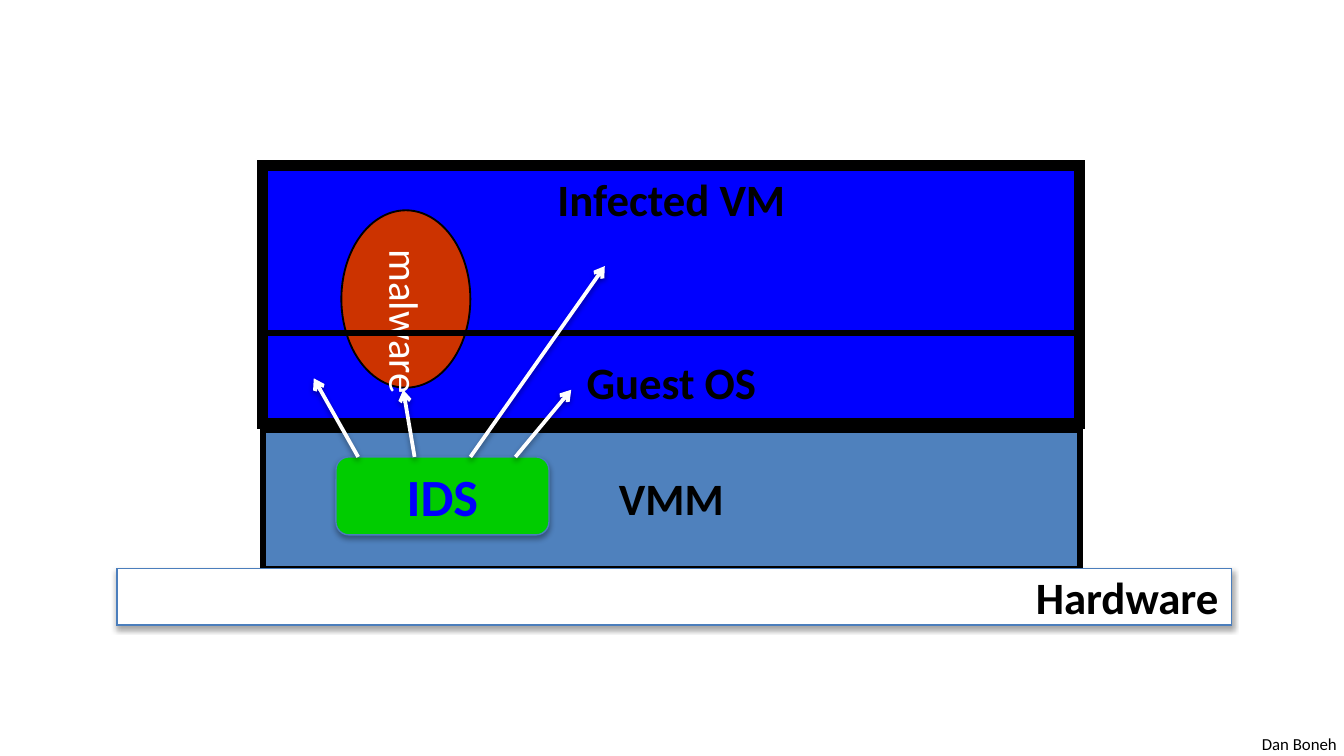
from dataclasses import dataclass
from typing import Optional

from lxml import etree
from pptx import Presentation
from pptx.dml.color import RGBColor
from pptx.enum.shapes import MSO_CONNECTOR, MSO_SHAPE
from pptx.enum.text import MSO_ANCHOR, MSO_AUTO_SIZE, PP_ALIGN
from pptx.oxml.ns import qn
from pptx.util import Emu, Pt

# Scale: 200 px to the inch
EMU_PER_PX = 4572
SLIDE_WIDTH, SLIDE_HEIGHT = 2000, 1125
FONT = "Calibri"

RECTANGLE = MSO_SHAPE.RECTANGLE
ROUNDED = MSO_SHAPE.ROUNDED_RECTANGLE
OVAL = MSO_SHAPE.OVAL
STRAIGHT = MSO_CONNECTOR.STRAIGHT
TOP, MIDDLE = MSO_ANCHOR.TOP, MSO_ANCHOR.MIDDLE
LEFT, CENTER, RIGHT = PP_ALIGN.LEFT, PP_ALIGN.CENTER, PP_ALIGN.RIGHT
FIT_TEXT = MSO_AUTO_SIZE.SHAPE_TO_FIT_TEXT

BLACK = RGBColor(0x00, 0x00, 0x00)
WHITE = RGBColor(0xFF, 0xFF, 0xFF)
BLUE = RGBColor(0x00, 0x00, 0xFF)
STEEL = RGBColor(0x4F, 0x81, 0xBD)
STEEL_EDGE = RGBColor(0x4B, 0x7E, 0xBC)
RED = RGBColor(0xCC, 0x33, 0x00)
GREEN = RGBColor(0x00, 0xCC, 0x00)


@dataclass
class Block:
    text: str
    left: int
    top: int
    width: int
    height: int
    fill: Optional[RGBColor]
    edge: RGBColor = BLACK
    edge_width: float = 3
    kind: int = RECTANGLE
    size: int = 24
    color: RGBColor = BLACK
    bold: bool = True
    align: int = CENTER
    anchor: int = MIDDLE
    wrap: bool = False
    vertical: bool = False
    shadow: bool = False


@dataclass
class Arrow:
    start_x: int
    end_x: int
    end_y: int


STACK_LEFT, STACK_WIDTH = 391, 1216
IDS_TOP = 680

# Back to front
BLOCKS = [
    Block("Infected VM", STACK_LEFT, 246, STACK_WIDTH, 384, BLUE,
          edge_width=6, anchor=TOP),
    Block("malware", 508, 313, 192, 264, RED, edge_width=1, kind=OVAL,
          size=22, color=WHITE, bold=False, vertical=True),
    Block("VMM", STACK_LEFT, 634, STACK_WIDTH, 212, STEEL),
    Block("Guest OS", STACK_LEFT, 496, STACK_WIDTH, 144, None),
    Block("Hardware", 174, 846, 1659, 84, WHITE, STEEL_EDGE, 0.75,
          align=RIGHT, wrap=True, shadow=True),
    Block("IDS", 500, IDS_TOP, 317, 116, GREEN, STEEL_EDGE, 0.75, kind=ROUNDED,
          size=28, color=BLUE, wrap=True, shadow=True),
]

# Probes from the top edge of the IDS
ARROWS = [
    Arrow(767, 850, 580),
    Arrow(700, 900, 396),
    Arrow(617, 600, 580),
    Arrow(533, 467, 563),
]


def px(length: int) -> Emu:
    return Emu(length * EMU_PER_PX)


def add_shadow(effects, distance: float, opacity: int) -> None:
    """Fill an effect list with a soft shadow that falls straight down."""
    shadow = etree.SubElement(
        effects, qn("a:outerShdw"), blurRad=str(Pt(3.1)),
        dist=str(Pt(distance)), dir="5400000", rotWithShape="0")
    color = etree.SubElement(shadow, qn("a:srgbClr"), val=str(BLACK))
    etree.SubElement(color, qn("a:alpha"), val=str(opacity * 1000))


def write_text(frame, text: str, size: int, color: RGBColor,
               bold: bool, align: int) -> None:
    paragraph = frame.paragraphs[0]
    paragraph.alignment = align
    run = paragraph.add_run()
    run.text = text
    run.font.name = FONT
    run.font.size = Pt(size)
    run.font.bold = bold
    run.font.color.rgb = color


def add_block(slide, block: Block) -> None:
    shape = slide.shapes.add_shape(
        block.kind, px(block.left), px(block.top),
        px(block.width), px(block.height))
    if block.fill is None:
        shape.fill.background()
    else:
        shape.fill.solid()
        shape.fill.fore_color.rgb = block.fill
    shape.line.color.rgb = block.edge
    shape.line.width = Pt(block.edge_width)
    properties = shape._element.spPr
    # Square corners on the outlines
    etree.SubElement(properties.find(qn("a:ln")), qn("a:miter"), lim="800000")
    shape.shadow.inherit = False
    if block.shadow:
        add_shadow(properties.find(qn("a:effectLst")), 1.8, 35)
    frame = shape.text_frame
    frame.word_wrap = block.wrap
    frame.vertical_anchor = block.anchor
    if block.vertical:
        frame._txBody.bodyPr.set("vert", "eaVert")
    write_text(frame, block.text, block.size, block.color,
               block.bold, block.align)


def add_arrow(slide, arrow: Arrow) -> None:
    connector = slide.shapes.add_connector(
        STRAIGHT, px(arrow.start_x), px(IDS_TOP),
        px(arrow.end_x), px(arrow.end_y))
    connector.line.color.rgb = WHITE
    connector.line.width = Pt(2)
    properties = connector._element.spPr
    etree.SubElement(properties.find(qn("a:ln")), qn("a:tailEnd"), type="arrow")
    add_shadow(etree.SubElement(properties, qn("a:effectLst")), 1.6, 38)


def add_footer(slide) -> None:
    box = slide.shapes.add_textbox(px(1858), px(1082), px(152), px(50))
    box.text_frame.word_wrap = False
    box.text_frame.auto_size = FIT_TEXT
    write_text(box.text_frame, "Dan Boneh", 9, BLACK, False, LEFT)


def main() -> None:
    presentation = Presentation()
    presentation.slide_width = px(SLIDE_WIDTH)
    presentation.slide_height = px(SLIDE_HEIGHT)
    slide = presentation.slides.add_slide(presentation.slide_layouts[6])

    add_footer(slide)
    for block in BLOCKS:
        add_block(slide, block)
    for arrow in ARROWS:
        add_arrow(slide, arrow)

    presentation.save("out.pptx")


if __name__ == "__main__":
    main()
